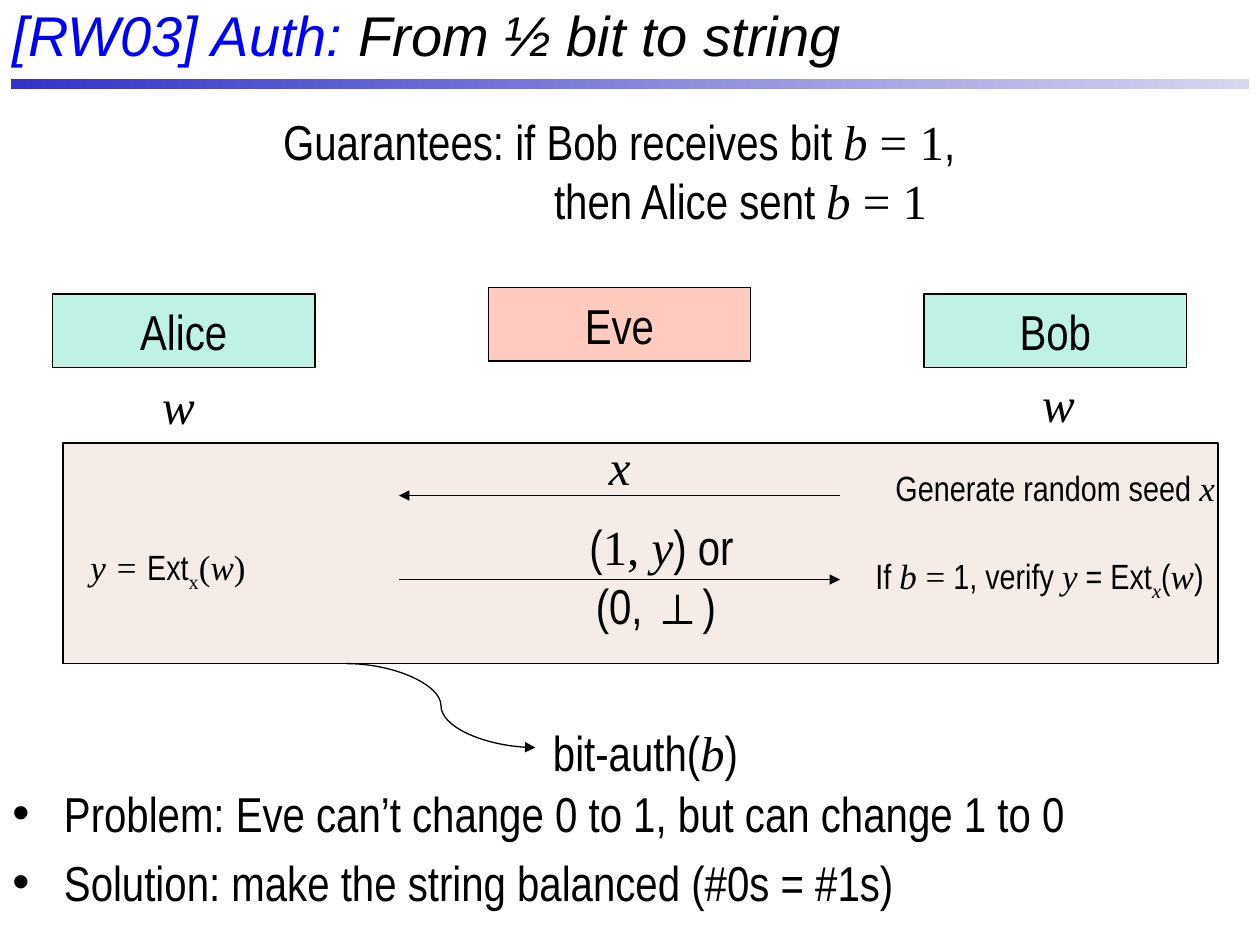
from lxml.etree import SubElement
from pptx import Presentation
from pptx.dml.color import RGBColor
from pptx.enum.shapes import MSO_CONNECTOR, MSO_SHAPE
from pptx.enum.text import MSO_ANCHOR, PP_ALIGN
from pptx.oxml.ns import qn
from pptx.util import Inches, Pt

HUES = {"black": "000000", "blue": "0000FF", "bar": "3333CC", "pale": "D6D6EF",
        "green": "00CC99", "red": "FF3300", "brown": "993300"}
FONTS = {
    "title": {"name": "Arial", "italic": True},
    "plain": {"name": "Arial Narrow"},
    "math": {"name": "Times New Roman"},
    "var": {"name": "Times New Roman", "italic": True},
    "sub": {"name": "Times New Roman"},
    "subvar": {"name": "Times New Roman", "italic": True},
}
RGB = {key: RGBColor.from_string(hue) for key, hue in HUES.items()}

deck = Presentation()
deck.slide_width, deck.slide_height = Inches(10), Inches(7.5)
slide = deck.slides.add_slide(deck.slide_layouts[5])
shapes = slide.shapes
COLS = 120  # the grid is 120 columns by 90 rows of square cells
cell = deck.slide_width / COLS


def grid(*cells):
    return [round(n * cell) for n in cells]


def write(shape, lines, size, align=PP_ALIGN.CENTER, hue="black"):
    """Fill a shape with lines, each a list of (text, font key[, colour]) runs."""
    frame = shape.text_frame
    for i, line in enumerate(lines):
        par = frame.paragraphs[0] if i == 0 else frame.add_paragraph()
        par.alignment = align
        for text, key, *tint in line:
            run = par.add_run()
            run.text = text
            run.font.size = Pt(size)
            run.font.color.rgb = RGB[tint[0] if tint else hue]
            for name, value in FONTS[key].items():
                setattr(run.font, name, value)
            if key.startswith("sub"):
                run.font._element.set("baseline", "-25000")
    return frame.paragraphs


# Title and the bar under it
title = shapes.title
title.left, title.top, title.width, title.height = grid(0, -0.6, COLS, 7.7)
title.text_frame.vertical_anchor = MSO_ANCHOR.TOP
write(title, [[("[RW03] Auth: ", "title", "blue"),
               ("From ½ bit to string", "title")]], 32, PP_ALIGN.LEFT)

bar = shapes.add_shape(MSO_SHAPE.RECTANGLE, *grid(1, 7.5, 118, 1))
bar.shadow.inherit = False
bar.line.fill.background()
bar.fill.gradient()
bar.fill.gradient_angle = 0
for stop, key, spot in zip(bar.fill.gradient_stops, ("bar", "pale"), (0, 1)):
    stop.color.rgb = RGB[key]
    stop.position = spot

# Protocol panel and the three parties
for name, hue, alpha, place in [
    ("", "brown", 9, (6, 42.2, 110, 21)),
    ("Alice", "green", 25, (5, 28, 25, 7)),
    ("Bob", "green", 25, (88, 28, 25, 7)),
    ("Eve", "red", 25, (46.5, 27.4, 25, 7)),
]:
    box = shapes.add_shape(MSO_SHAPE.RECTANGLE, *grid(*place))
    box.shadow.inherit = False
    box.fill.solid()
    box.fill.fore_color.rgb = RGB[hue]
    tint = box.element.spPr.find(qn("a:solidFill"))[0]
    SubElement(tint, qn("a:alpha")).set("val", str(alpha * 1000))
    box.line.color.rgb = RGB["black"]
    box.line.width = Pt(0.75)
    if name:
        box.text_frame.vertical_anchor = MSO_ANCHOR.MIDDLE
        write(box, [[(name, "plain")]], 28)

# Messages between the parties, and the pointer to the name of the protocol
for kind, ends in [
    (MSO_CONNECTOR.STRAIGHT, (80, 47.2, 38, 47.2)),
    (MSO_CONNECTOR.STRAIGHT, (38, 55.2, 80, 55.2)),
    (MSO_CONNECTOR.CURVE, (33, 63.2, 51, 71.2)),
]:
    arrow = shapes.add_connector(kind, *grid(*ends))
    arrow.line.color.rgb = RGB["black"]
    arrow.line.width = Pt(0.75)
    SubElement(arrow.line._get_or_add_ln(), qn("a:tailEnd")).set("type", "triangle")
    SubElement(arrow.element.spPr, qn("a:effectLst"))

# Centred labels: place, size, lines of runs
bit = [("b", "var"), (" = 1", "math")]
secret = [[("w", "var")]]
labels = [
    ((14.2, 35.2, 5.6, 6.8), 28, secret),
    ((98, 35, 5.6, 6.8), 28, secret),
    ((56.8, 41, 4.4, 6.8), 28, [[("x", "var")]]),
    ((83, 43.8, 35, 5.2), 20, [[("Generate random seed ", "plain"), ("x", "var")]]),
    ((53, 48.6, 20, 12.4), 28, [
        [("(", "plain"), ("1,", "math"), (" y", "var"), (") or", "plain")],
        [("(0, ", "plain"), ("⊥", "math"), (") ", "plain")]]),
    ((6, 51.4, 20, 5.2), 20, [
        [("y = ", "var"), ("Ext", "plain"), ("x", "sub"), ("(", "math"),
         ("w", "var"), (")", "math")]]),
    ((81, 52.2, 36, 5.2), 20, [
        [("If ", "plain"), ("b ", "var"), ("=", "math"), (" 1, verify ", "plain"),
         ("y", "var"), (" = Ext", "plain"), ("x", "subvar"), ("(", "plain"),
         ("w", "var"), (")", "plain")]]),
    ((51, 68.2, 22, 6.8), 28, [
        [("bit-auth(", "plain"), ("b", "var"), (") ", "plain")]]),
    ((3, 10, 113, 12.4), 28, [
        [("Guarantees: if Bob receives bit ", "plain"), *bit, (", ", "plain")],
        [("then Alice sent ", "plain"), *bit]]),
]
for place, size, lines in labels:
    label = shapes.add_textbox(*grid(*place))
    label.text_frame.word_wrap = place[2] > 6
    pars = write(label, lines, size)
# The last label is the guarantee; its second line is set in from the left
pars[1]._p.get_or_add_pPr().set("marL", str(Inches(1.84)))

# Bulleted conclusions
notes = shapes.add_textbox(*grid(0, 74, 119, 13.6))
notes.text_frame.word_wrap = True
points = ["Problem: Eve can’t change 0 to 1, but can change 1 to 0",
          "Solution: make the string balanced (#0s = #1s)"]
for par in write(notes, [[(point, "plain")] for point in points], 28, PP_ALIGN.LEFT):
    par.space_before = Pt(6)
    props = par._p.get_or_add_pPr()
    props.set("marL", str(Inches(0.41)))
    props.set("indent", str(-Inches(0.41)))
    SubElement(props, qn("a:buFont")).set("typeface", "Arial")
    SubElement(props, qn("a:buChar")).set("char", "•")

deck.save("out.pptx")
